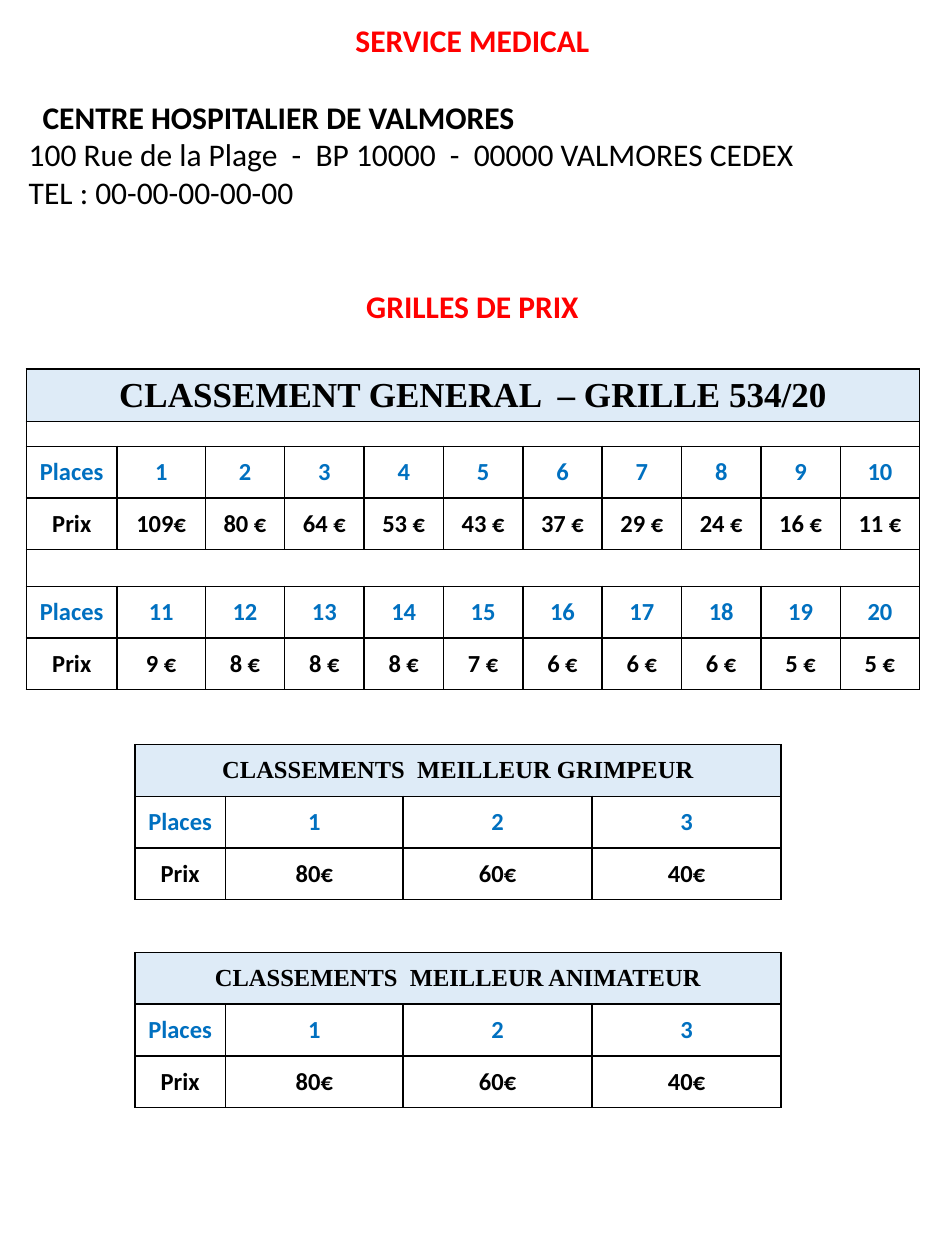
from pptx import Presentation
from pptx.dml.color import RGBColor
from pptx.enum.text import MSO_ANCHOR, PP_ALIGN
from pptx.oxml.ns import qn
from pptx.util import Inches, Pt
from lxml.etree import SubElement

RED = RGBColor(0xFF, 0x00, 0x00)
BLACK = RGBColor(0x00, 0x00, 0x00)
BLUE = RGBColor(0x00, 0x70, 0xC0)
PALE_BLUE = RGBColor(0xDE, 0xEB, 0xF7)

ROW_H = 0.41
LABEL_W = 0.72
PRIZES_1_10 = ["109€", "80 €", "64 €", "53 €", "43 €", "37 €", "29 €", "24 €", "16 €", "11 €"]
PRIZES_11_20 = ["9 €", "8 €", "8 €", "8 €", "7 €", "6 €", "6 €", "6 €", "5 €", "5 €"]
PODIUM_PRIZES = ["80€", "60€", "40€"]


def format_paragraph(p, size, color, bold=True, name="Calibri", align=PP_ALIGN.CENTER):
    """Set the alignment and font of a paragraph."""
    p.alignment = align
    p.font.name = name
    p.font.size = Pt(size)
    p.font.bold = bold
    p.font.color.rgb = color


def add_title(s, text):
    """Fill and place the title placeholder."""
    title = s.shapes.title
    title.left, title.top = Inches(0.13), Inches(2.23)
    title.width, title.height = Inches(7.24), Inches(0.4)
    tf = title.text_frame
    tf.text = text
    tf.vertical_anchor = MSO_ANCHOR.TOP
    p = tf.paragraphs[0]
    format_paragraph(p, 18, RED)
    p.line_spacing = 1.0
    p.space_before = Pt(0)


def add_medical_service(s):
    """Add the medical service heading and the hospital's address."""
    box = s.shapes.add_textbox(Inches(0.13), Inches(0.12), Inches(7.24), Inches(1.62))
    tf = box.text_frame
    tf.word_wrap = True
    tf.text = "\n".join([
        "SERVICE MEDICAL",
        "CENTRE HOSPITALIER DE VALMORES",
        "100 Rue de la Plage  -  BP 10000  -  00000 VALMORES CEDEX",
        "TEL : 00-00-00-00-00",
    ])
    heading, hospital, *address = tf.paragraphs
    format_paragraph(heading, 18, RED)
    heading.space_after = Pt(22)
    format_paragraph(hospital, 18, BLACK, align=PP_ALIGN.LEFT)
    hospital._p.get_or_add_pPr().set("marL", str(Inches(0.11)))
    for p in address:
        format_paragraph(p, 18, BLACK, bold=False, align=PP_ALIGN.LEFT)


def set_borders(cell):
    """Draw a thin black line on each side of a cell."""
    tcPr = cell._tc.get_or_add_tcPr()
    for tag in ("a:lnL", "a:lnR", "a:lnT", "a:lnB"):
        ln = SubElement(tcPr, qn(tag), w=str(Pt(1)))
        fill = SubElement(ln, qn("a:solidFill"))
        SubElement(fill, qn("a:srgbClr"), val=str(BLACK))


def add_grid(s, left, top, widths, heights):
    """Add a bordered table without fills."""
    frame = s.shapes.add_table(len(heights), len(widths), Inches(left), Inches(top),
                               Inches(sum(widths)), Inches(sum(heights)))
    table = frame.table
    table.first_row = table.horz_banding = False
    for col, width in zip(table.columns, widths):
        col.width = Inches(width)
    for row, height in zip(table.rows, heights):
        row.height = Inches(height)
    for cell in table.iter_cells():
        set_borders(cell)
        cell.fill.background()
        cell.vertical_anchor = MSO_ANCHOR.MIDDLE
        cell.margin_left = cell.margin_right = Inches(0.05)
        cell.margin_top = cell.margin_bottom = Inches(0.04)
    return table


def merge_row(table, row):
    """Merge a whole table row and return its cell."""
    cell = table.cell(row, 0)
    cell.merge(table.cell(row, len(table.columns) - 1))
    return cell


def fill_heading(table, text, size):
    """Write the shaded heading in the first row."""
    cell = merge_row(table, 0)
    cell.fill.solid()
    cell.fill.fore_color.rgb = PALE_BLUE
    cell.text = text
    format_paragraph(cell.text_frame.paragraphs[0], size, BLACK, name="Times New Roman")


def fill_spacer(table, row):
    """Merge an empty row and let it stay low."""
    merge_row(table, row)
    for cell in table.rows[row].cells:
        p = cell.text_frame.paragraphs[0]
        p.font.size = Pt(6)
        SubElement(p._p, qn("a:endParaRPr"), sz="600")


def fill_prizes(table, row, first_place, prizes):
    """Write a row of places and the row of prizes below it."""
    places = [str(first_place + i) for i in range(len(prizes))]
    lines = ((["Places"] + places, BLUE), (["Prix"] + prizes, BLACK))
    for r, (texts, color) in enumerate(lines, row):
        for cell, text in zip(table.rows[r].cells, texts):
            cell.text = text
            format_paragraph(cell.text_frame.paragraphs[0], 14, color)


def add_general_ranking(s):
    """Add the prize table of the general ranking."""
    table = add_grid(s, 0.21, 2.93, [LABEL_W, 0.7] + [0.63] * 9,
                     [ROW_H, 0.2, ROW_H, ROW_H, 0.29, ROW_H, ROW_H])
    fill_heading(table, "CLASSEMENT GENERAL  – GRILLE 534/20", 20)
    for row in (1, 4):
        fill_spacer(table, row)
    fill_prizes(table, 2, 1, PRIZES_1_10)
    fill_prizes(table, 5, 11, PRIZES_11_20)


def add_podium(s, top, heading):
    """Add the prize table of a three-place ranking."""
    table = add_grid(s, 1.07, top, [LABEL_W, 1.41, 1.5, 1.5], [ROW_H] * 3)
    fill_heading(table, heading, 14)
    fill_prizes(table, 1, 1, PODIUM_PRIZES)


def main():
    """Build the slide and save it."""
    prs = Presentation()
    prs.slide_width, prs.slide_height = Inches(7.5), Inches(10)
    s = prs.slides.add_slide(prs.slide_layouts[5])
    add_title(s, "GRILLES DE PRIX")
    add_medical_service(s)
    add_podium(s, 5.91, "CLASSEMENTS  MEILLEUR GRIMPEUR")
    add_general_ranking(s)
    add_podium(s, 7.56, "CLASSEMENTS  MEILLEUR ANIMATEUR")
    prs.save("out.pptx")


if __name__ == "__main__":
    main()
